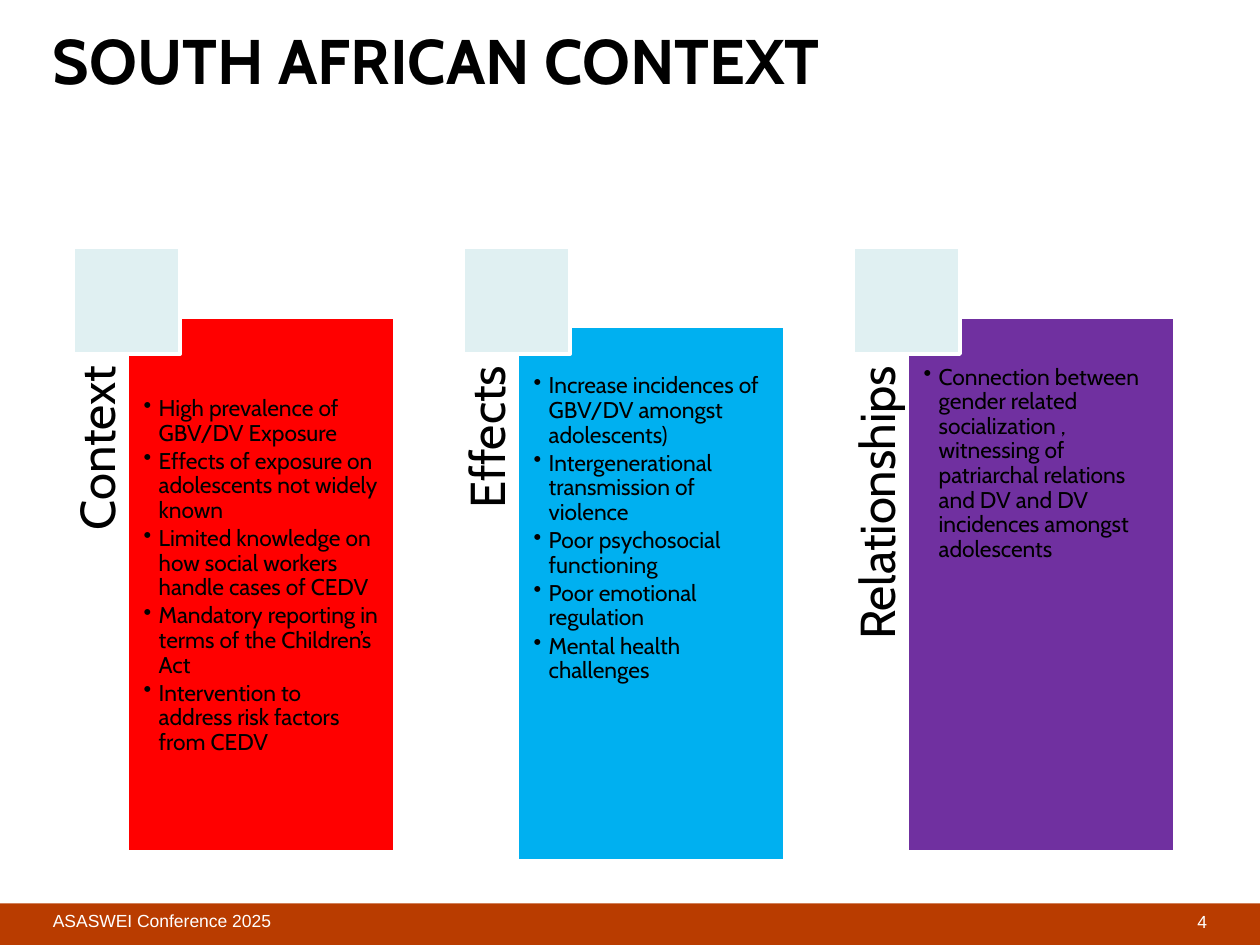
from dataclasses import dataclass

from lxml.etree import SubElement
from pptx import Presentation
from pptx.dml.color import RGBColor
from pptx.enum.shapes import MSO_SHAPE
from pptx.enum.text import MSO_ANCHOR, PP_ALIGN
from pptx.oxml.ns import qn
from pptx.util import Inches, Pt

BLACK = RGBColor(0x00, 0x00, 0x00)
WHITE = RGBColor(0xFF, 0xFF, 0xFF)
RUST = RGBColor(0xB9, 0x3C, 0x00)
MIST = RGBColor(0xE0, 0xF0, 0xF2)
RED = RGBColor(0xFF, 0x00, 0x00)
BLUE = RGBColor(0x00, 0xB0, 0xF0)
PURPLE = RGBColor(0x70, 0x30, 0xA0)

FIRST_LEFT, COLUMN_STEP = 0.58, 3.095
SQUARE_TOP, SQUARE_SIZE = 1.96, 0.85
PANEL_WIDTH, PANEL_HEIGHT = 2.12, 4.24
LABEL_WIDTH = 0.43
LABEL_MIDDLE = 4.645


@dataclass
class Column:
    label: str
    color: RGBColor
    top: float
    text_inset: float
    points: list[str]


COLUMNS = [
    Column("Context", RED, 2.52, 0.63, [
        "High prevalence of GBV/DV Exposure",
        "Effects of exposure on adolescents not widely known",
        "Limited knowledge on how social workers handle cases of CEDV",
        "Mandatory reporting in terms of the Children’s Act",
        "Intervention to address risk factors from CEDV",
    ]),
    Column("Effects", BLUE, 2.59, 0.38, [
        "Increase incidences of GBV/DV amongst adolescents)",
        "Intergenerational transmission of violence",
        "Poor psychosocial functioning",
        "Poor emotional regulation",
        "Mental health challenges",
    ]),
    Column("Relationships", PURPLE, 2.52, 0.38, [
        "Connection between gender related socialization , witnessing of "
        "patriarchal relations and DV and DV incidences amongst adolescents",
    ]),
]


def set_insets(frame, left: float, top: float, right: float, bottom: float) -> None:
    frame.word_wrap = True
    frame.vertical_anchor = MSO_ANCHOR.TOP
    frame.margin_left, frame.margin_top = Inches(left), Inches(top)
    frame.margin_right, frame.margin_bottom = Inches(right), Inches(bottom)


def style_font(font, name: str, size: float, color: RGBColor, bold: bool = False) -> None:
    font.name, font.size, font.bold = name, Pt(size), bold
    font.color.rgb = color


def add_text(page, text: str, left: float, top: float, width: float, height: float,
             name: str, size: float, color: RGBColor, bold: bool = False,
             align=PP_ALIGN.LEFT, right_inset: float = 0):
    box = page.shapes.add_textbox(Inches(left), Inches(top), Inches(width), Inches(height))
    set_insets(box.text_frame, 0, 0, right_inset, 0)
    box.text_frame.text = text
    para = box.text_frame.paragraphs[0]
    para.alignment = align
    style_font(para.runs[0].font, name, size, color, bold)
    return box


def add_rect(page, left: float, top: float, width: float, height: float,
             fill: RGBColor, outlined: bool = True):
    rect = page.shapes.add_shape(MSO_SHAPE.RECTANGLE, Inches(left), Inches(top),
                                 Inches(width), Inches(height))
    rect.shadow.inherit = False
    rect.fill.solid()
    rect.fill.fore_color.rgb = fill
    if outlined:
        rect.line.color.rgb = WHITE
        rect.line.width = Pt(2)
    else:
        rect.line.fill.background()
    return rect


def add_bullets(frame, points: list[str]) -> None:
    frame.text = "\n".join(points)
    for para in frame.paragraphs:
        props = para._p.get_or_add_pPr()
        props.set("marL", str(Inches(0.12)))
        props.set("indent", str(Inches(-0.12)))
        para.alignment = PP_ALIGN.LEFT
        para.line_spacing = 0.9
        para.space_after = Pt(2)
        SubElement(props, qn("a:buChar"), char="•")
        style_font(para.runs[0].font, "Cabin", 13, BLACK)


def add_column(page, column: Column, left: float) -> None:
    # Label turned to read upwards
    label = add_text(page, column.label, left + (LABEL_WIDTH - PANEL_HEIGHT) / 2,
                     LABEL_MIDDLE - LABEL_WIDTH / 2, PANEL_HEIGHT, LABEL_WIDTH,
                     "Cabin", 28, BLACK, align=PP_ALIGN.RIGHT, right_inset=0.38)
    label.rotation = 270
    label.text_frame.paragraphs[0].line_spacing = 0.9

    # Panel with bullets, then the corner square over it
    panel = add_rect(page, left + LABEL_WIDTH, column.top, PANEL_WIDTH, PANEL_HEIGHT,
                     column.color)
    set_insets(panel.text_frame, 0.13, column.text_inset, 0.13, 0.13)
    add_bullets(panel.text_frame, column.points)
    add_rect(page, left, SQUARE_TOP, SQUARE_SIZE, SQUARE_SIZE, MIST)


def main() -> None:
    deck = Presentation()
    deck.slide_width, deck.slide_height = Inches(10), Inches(7.5)
    page = deck.slides.add_slide(deck.slide_layouts[6])

    # Footer band and title
    add_rect(page, 0, 7.17, 10, 0.33, RUST, outlined=False)
    add_text(page, "SOUTH AFRICAN CONTEXT", 0.42, 0.17, 7.92, 1.25,
             "Cabin", 36, BLACK, bold=True)
    add_text(page, "ASASWEI Conference 2025", 0.42, 7.22, 4.17, 0.28, "Arial", 10, WHITE)
    add_text(page, "4", 7.5, 7.23, 2.08, 0.23, "Arial", 10, WHITE, align=PP_ALIGN.RIGHT)

    # Three columns at an equal step
    for index, column in enumerate(COLUMNS):
        add_column(page, column, FIRST_LEFT + index * COLUMN_STEP)

    deck.save("out.pptx")


if __name__ == "__main__":
    main()
